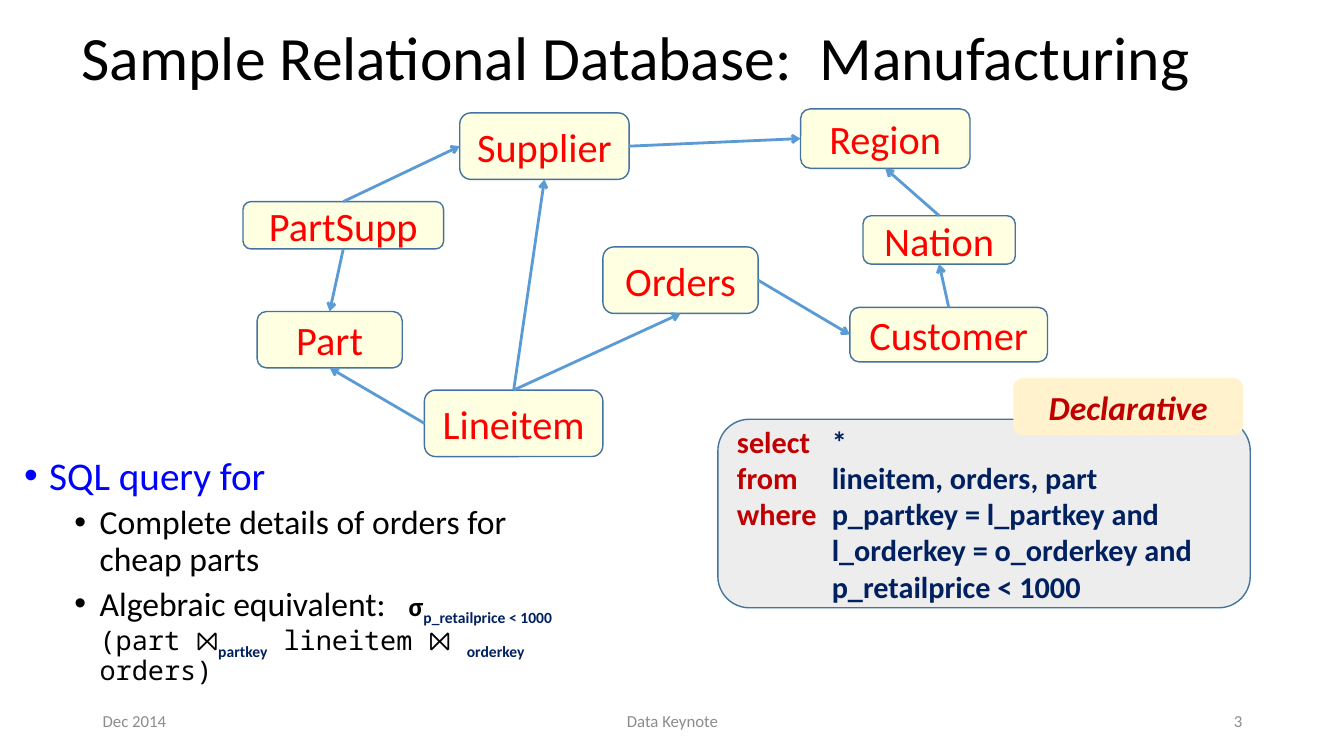
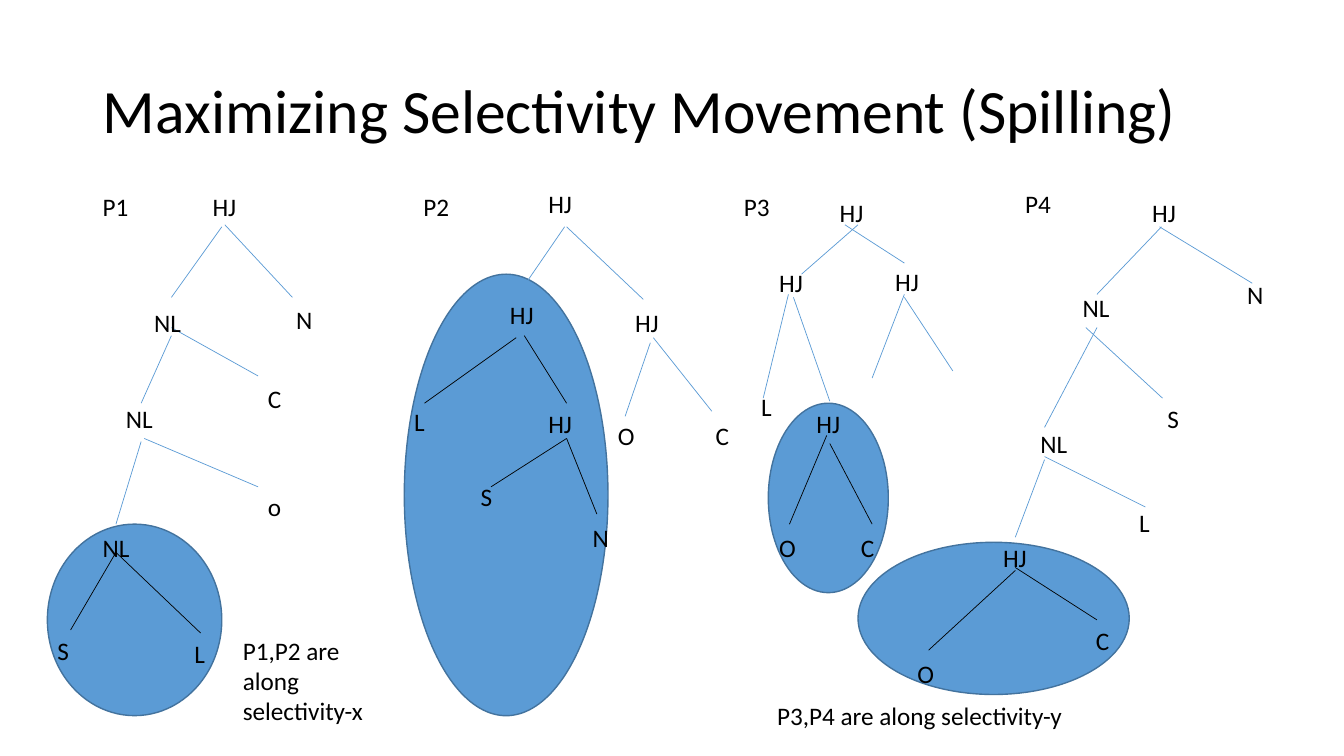
from dataclasses import dataclass

from lxml.etree import SubElement
from pptx import Presentation
from pptx.dml.color import RGBColor
from pptx.enum.shapes import MSO_CONNECTOR, MSO_SHAPE
from pptx.enum.text import MSO_ANCHOR, MSO_AUTO_SIZE, PP_ALIGN
from pptx.oxml.ns import qn
from pptx.util import Inches, Pt


@dataclass(frozen=True)
class Theme:
    font: str = "Calibri"
    mono: str = "Noto Sans Mono"
    black: str = "000000"
    grey: str = "8C8C8C"
    blue: str = "5B9BD5"
    outline: str = "43739E"
    cream: str = "FFFFE1"
    sand: str = "FFF2CC"
    silver: str = "EDEDED"
    red: str = "FF0000"
    crimson: str = "C00000"
    navy: str = "002060"
    bright_blue: str = "0000FF"
    title_size: float = 44
    table_size: float = 28.8
    topic_size: float = 28
    point_size: float = 24
    sql_size: float = 21.6
    algebra_size: float = 19.2
    label_size: float = 18
    footer_size: float = 12


THEME = Theme()


def write(frame, text, size, color=THEME.black, font=THEME.font, bold=False, italic=False,
          subscript=False, align=PP_ALIGN.LEFT, anchor=None, new_line=False):
    """Add a run to the last paragraph of the frame, or to a new one, and return that paragraph."""
    frame.word_wrap = True
    if anchor is not None:
        frame.vertical_anchor = anchor
    para = frame.add_paragraph() if new_line else frame.paragraphs[-1]
    para.alignment = align
    span = para.add_run()
    span.text = text
    span.font.name = font
    span.font.size = Pt(size)
    span.font.bold = bold
    span.font.italic = italic
    span.font.color.rgb = RGBColor.from_string(color)
    if subscript:
        span._r.get_or_add_rPr().set("baseline", "-25000")
    return para


def paint(shape, line=None, width=1, fill=None, arrow=False):
    """Give a shape or connector its fill and line, without a shadow."""
    if fill:
        shape.fill.solid()
        shape.fill.fore_color.rgb = RGBColor.from_string(fill)
    if line:
        shape.line.color.rgb = RGBColor.from_string(line)
        shape.line.width = Pt(width)
    else:
        shape.line.fill.background()
    properties = shape.element.spPr
    if arrow:
        SubElement(properties.find(qn("a:ln")), qn("a:tailEnd"), type="arrow")
    SubElement(properties, qn("a:effectLst"))


deck = Presentation()
deck.slide_width = Inches(13.33)
deck.slide_height = Inches(7.5)

pages = []
for heading, left, top in [
    ("Sample Relational Database:  Manufacturing", 0.71, -0.12),
    ("Maximizing Selectivity Movement (Spilling)", 0.92, 0.4),
]:
    page = deck.slides.add_slide(deck.slide_layouts[5])
    title = page.shapes.title
    title.left, title.top = Inches(left), Inches(top)
    title.width, title.height = Inches(11.5), Inches(1.45)
    title.text_frame.auto_size = MSO_AUTO_SIZE.NONE
    para = write(title.text_frame, heading, THEME.title_size, anchor=MSO_ANCHOR.MIDDLE)
    para.line_spacing = 0.9
    pages.append(page)
schema_page, spilling_page = pages

# Slide 1: schema diagram
for text, left, width, align in [
    ("Dec 2014", 0.92, 3, PP_ALIGN.LEFT),
    ("Data Keynote", 4.42, 4.5, PP_ALIGN.CENTER),
    ("3", 9.42, 3, PP_ALIGN.RIGHT),
]:
    box = schema_page.shapes.add_textbox(Inches(left), Inches(6.95), Inches(width), Inches(0.4))
    write(box.text_frame, text, THEME.footer_size, THEME.grey, align=align,
          anchor=MSO_ANCHOR.MIDDLE)

panels = {}
for name, bounds, fill, line in [
    ("Part", (2.55, 3.09, 1.44, 0.56), THEME.cream, THEME.outline),
    ("PartSupp", (2.41, 2, 1.99, 0.47), THEME.cream, THEME.outline),
    ("Supplier", (4.56, 1.12, 1.68, 0.66), THEME.cream, THEME.outline),
    ("Lineitem", (4.21, 3.87, 1.77, 0.66), THEME.cream, THEME.outline),
    ("Customer", (8.43, 3.05, 1.96, 0.54), THEME.cream, THEME.outline),
    ("Orders", (5.98, 2.45, 1.54, 0.66), THEME.cream, THEME.outline),
    ("Nation", (8.56, 2.14, 1.51, 0.48), THEME.cream, THEME.outline),
    ("Region", (7.94, 1.08, 1.68, 0.59), THEME.cream, THEME.outline),
    ("SQL", (7.12, 4.16, 5.28, 1.87), THEME.silver, THEME.outline),
    ("Declarative", (10.05, 3.75, 2.28, 0.57), THEME.sand, None),
]:
    panel = schema_page.shapes.add_shape(MSO_SHAPE.ROUNDED_RECTANGLE, *map(Inches, bounds))
    paint(panel, line, fill=fill)
    if fill == THEME.cream:
        write(panel.text_frame, name, THEME.table_size, THEME.red, align=PP_ALIGN.CENTER,
              anchor=MSO_ANCHOR.MIDDLE)
    panels[name] = panel

TOP, LEFT, BOTTOM, RIGHT = range(4)
for source, source_side, target, target_side in [
    ("Orders", RIGHT, "Customer", LEFT),
    ("Lineitem", TOP, "Orders", BOTTOM),
    ("Lineitem", LEFT, "Part", BOTTOM),
    ("Lineitem", TOP, "Supplier", BOTTOM),
    ("PartSupp", TOP, "Supplier", LEFT),
    ("PartSupp", BOTTOM, "Part", TOP),
    ("Customer", TOP, "Nation", BOTTOM),
    ("Nation", TOP, "Region", BOTTOM),
    ("Supplier", RIGHT, "Region", LEFT),
]:
    reference = schema_page.shapes.add_connector(MSO_CONNECTOR.STRAIGHT, 0, 0, 0, 0)
    reference.begin_connect(panels[source], source_side)
    reference.end_connect(panels[target], target_side)
    paint(reference, THEME.blue, 2, arrow=True)

# Slide 1: query text
write(panels["Declarative"].text_frame, "Declarative", THEME.point_size, THEME.crimson,
      bold=True, italic=True, align=PP_ALIGN.CENTER, anchor=MSO_ANCHOR.MIDDLE)
sql = panels["SQL"].text_frame
for row, (keyword, clause) in enumerate([
    ("select", "*"),
    ("from", "lineitem, orders, part"),
    ("where", "p_partkey = l_partkey and"),
    ("", "l_orderkey = o_orderkey and"),
    ("", "p_retailprice < 1000"),
]):
    para = write(sql, keyword + "\t", THEME.sql_size, THEME.crimson, bold=True,
                 anchor=MSO_ANCHOR.MIDDLE, new_line=row > 0)
    write(sql, clause, THEME.sql_size, THEME.navy, bold=True)
    tabs = SubElement(para._p.get_or_add_pPr(), qn("a:tabLst"))
    SubElement(tabs, qn("a:tab"), pos=str(Inches(0.94)), algn="l")

body = schema_page.shapes.add_textbox(
    Inches(0.14), Inches(4.48), Inches(5.64), Inches(2.47)).text_frame
write(body, "SQL query for", THEME.topic_size, THEME.bright_blue)
write(body, "Complete details of orders for cheap parts", THEME.point_size, new_line=True)
write(body, "Algebraic equivalent:   ", THEME.point_size, new_line=True)
plain = {"font": THEME.mono}
symbol = {"font": THEME.mono, "bold": True}
condition = {"color": THEME.navy, "bold": True, "subscript": True}
for text, style in [
    ("σ", {"bold": True}),
    ("p_retailprice < 1000 ", condition),
    ("(part ", plain),
    ("⨝", symbol),
    ("partkey", condition),
    (" lineitem ", plain),
    ("⨝ ", symbol),
    ("orderkey", condition),
    (" orders)", plain),
]:
    write(body, text, THEME.algebra_size, **style)
for para, margin, space in zip(body.paragraphs, (0.25, 0.75, 0.75), (10, 5, 5)):
    para.line_spacing = 0.9
    para.space_before = Pt(space)
    properties = para._p.get_or_add_pPr()
    properties.set("marL", str(Inches(margin)))
    properties.set("indent", str(Inches(-0.25)))
    SubElement(properties, qn("a:buFont"), typeface="Arial")
    SubElement(properties, qn("a:buChar"), char="•")

# Slide 2: each plan has an oval around its spilled subtree, labels at (left, top),
# and branches as (start, end) in the main tree and in the spilled subtree
plans = [
    {
        "oval": (0.47, 5.2, 1.73, 1.9),
        "labels": [("P1", 0.92, 1.85), ("HJ", 2.01, 1.85), ("NL", 1.43, 3), ("N", 2.84, 2.97),
                   ("NL", 1.15, 3.95), ("C", 2.56, 3.75), ("o", 2.56, 4.83),
                   ("NL", 0.92, 5.23), ("S", 0.47, 6.25), ("L", 1.83, 6.28)],
        "main": [((2.23, 2.23), (2.9, 2.95)), ((2.2, 2.25), (1.7, 2.95)),
                 ((1.7, 3.25), (2.56, 3.73)), ((1.7, 3.33), (1.4, 4)),
                 ((1.43, 4.35), (2.56, 4.83)), ((1.4, 4.38), (1.15, 5.2))],
        "spilled": [((1.15, 5.48), (1.99, 6.28)), ((1.15, 5.48), (0.7, 6.25))],
    },
    {
        "oval": (4.01, 2.72, 2.02, 4.38),
        "labels": [("P2", 4.1, 1.85), ("HJ", 5.34, 1.82), ("HJ", 4.96, 2.92), ("HJ", 6.2, 3),
                   ("O", 6.03, 4.12), ("C", 7, 4.12), ("HJ", 5.34, 4), ("L", 4.01, 3.98),
                   ("S", 4.67, 4.73), ("N", 5.78, 5.13)],
        "main": [((5.62, 2.25), (6.38, 2.97)), ((5.6, 2.25), (5.12, 2.95)),
                 ((6.45, 3.4), (6.2, 4.13)), ((6.48, 3.35), (7.06, 4.08))],
        "spilled": [((5.2, 3.33), (5.62, 4)), ((5.12, 3.35), (4.21, 4)),
                    ((5.62, 4.35), (4.87, 4.83)), ((5.62, 4.35), (5.92, 5.1))],
    },
    {
        "oval": (7.62, 4, 1.19, 1.88),
        "labels": [("P3", 7.28, 1.85), ("HJ", 8.23, 1.91), ("HJ", 8.78, 2.59),
                   ("HJ", 7.63, 2.6), ("L", 7.45, 3.83), ("HJ", 8, 4), ("O", 7.63, 5.23),
                   ("C", 8.44, 5.23)],
        "main": [((8.38, 2.23), (8.97, 2.61)), ((8.51, 2.23), (7.95, 2.72)),
                 ((8.97, 2.92), (8.65, 3.75)), ((8.97, 2.95), (9.45, 3.68)),
                 ((7.82, 2.92), (7.57, 3.95)), ((7.87, 2.95), (8.23, 3.98))],
        "spilled": [((8.2, 4.32), (7.83, 5.2)), ((8.23, 4.4), (8.65, 5.2))],
    },
    {
        "oval": (8.51, 5.38, 2.69, 1.51),
        "labels": [("P4", 10.07, 1.82), ("HJ", 11.33, 1.91), ("NL", 10.64, 2.85),
                   ("N", 12.27, 2.72), ("NL", 10.22, 4.2), ("S", 11.48, 3.95),
                   ("HJ", 9.85, 5.33), ("L", 11.2, 4.98), ("O", 9, 6.48), ("C", 10.77, 6.15)],
        "main": [((11.5, 2.25), (12.42, 2.81)), ((11.52, 2.25), (10.88, 2.92)),
                 ((10.77, 3.25), (11.53, 3.95)), ((10.88, 3.25), (10.36, 4.24)),
                 ((10.36, 4.53), (11.36, 5.03)), ((10.36, 4.56), (10.07, 5.33))],
        "spilled": [((10.07, 5.63), (10.88, 6.15)), ((10.07, 5.66), (9.21, 6.45))],
    },
]
captions = [
    ("P1,P2 are along selectivity-x", 2.31, 6.25, 1.69, 1.01),
    ("P3,P4 are along selectivity-y", 7.61, 6.9, 5.3, 0.4),
]
for plan in plans:
    oval = spilling_page.shapes.add_shape(MSO_SHAPE.OVAL, *map(Inches, plan["oval"]))
    paint(oval, THEME.outline, fill=THEME.blue)
    for part, color in [("main", THEME.blue), ("spilled", THEME.black)]:
        for start, end in plan[part]:
            branch = spilling_page.shapes.add_connector(
                MSO_CONNECTOR.STRAIGHT, *map(Inches, start + end))
            paint(branch, color, 0.5)
    captions += [(*label, 0.6, 0.4) for label in plan["labels"]]
for text, *bounds in captions:
    box = spilling_page.shapes.add_textbox(*map(Inches, bounds))
    write(box.text_frame, text, THEME.label_size)

deck.save("out.pptx")
